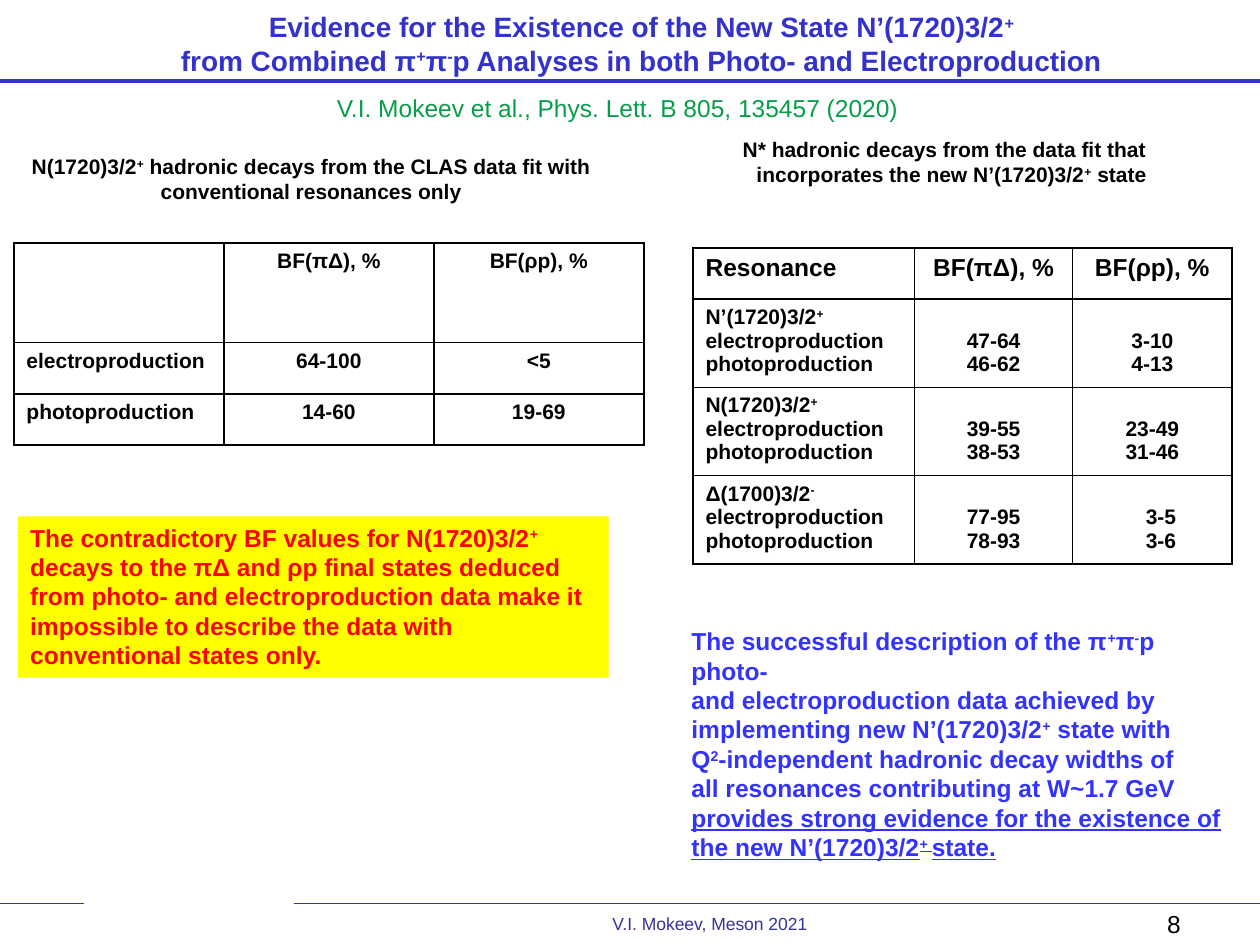
from dataclasses import dataclass
from typing import NamedTuple

from lxml.etree import SubElement
from pptx import Presentation
from pptx.dml.color import RGBColor as Rgb
from pptx.enum.shapes import MSO_CONNECTOR as Connector, MSO_SHAPE as Preset
from pptx.enum.text import MSO_ANCHOR as Anchor, PP_ALIGN as Align
from pptx.oxml.ns import qn
from pptx.util import Cm, Pt


@dataclass(frozen=True)
class Theme:
    """Colours, font and type sizes of the slide."""
    font: str = "Arial"
    black: str = "000000"
    title: str = "3333CC"
    citation: str = "079E49"
    alert: str = "FF0000"
    highlight: str = "FFFF00"
    conclusion: str = "3333FF"
    footer: str = "333399"
    title_size: int = 16
    body_size: int = 14
    table_size: int = 12
    footer_size: int = 10


class Box(NamedTuple):
    """A rectangle in centimetres."""
    left: float
    top: float
    width: float
    height: float

    def inner(self, left, top, width, height):
        """Return a rectangle offset from this one's corner."""
        return Box(self.left + left, self.top + top, width, height)

    def lengths(self):
        """Return the four values as slide lengths."""
        return [Cm(value) for value in self]


THEME = Theme()


def apply(target, formats):
    """Set each format value on the target."""
    for name, value in formats.items():
        setattr(target, name, value)


def write(frame, lines, size, color, align=Align.LEFT, underlined=(), **formats):
    """Fill a frame with one paragraph per line, ^ enclosing superscripts."""
    for index, line in enumerate(lines):
        paragraph = frame.paragraphs[0] if index == 0 else frame.add_paragraph()
        paragraph.alignment = align
        for order, piece in enumerate(line.split("^")):
            if not piece:
                continue
            run = paragraph.add_run()
            run.text = piece
            apply(run.font, {"name": THEME.font, "size": Pt(size), **formats})
            run.font.color.rgb = Rgb.from_string(color)
            if index in underlined:
                run.font.underline = True
            if order % 2:
                run._r.get_or_add_rPr().set("baseline", "30000")


def add_text(slide, box, lines, size, color, frame_formats=None, **formats):
    """Add a wrapped text box."""
    frame = slide.shapes.add_textbox(*box.lengths()).text_frame
    apply(frame, {"word_wrap": True, **(frame_formats or {})})
    write(frame, lines, size, color, **formats)


def add_rule(slide, box, color, weight):
    """Draw a horizontal rule along the top of the box."""
    left, top, width, _ = box.lengths()
    rule = slide.shapes.add_connector(Connector.STRAIGHT, left, top, left + width, top)
    rule.line.color.rgb = Rgb.from_string(color)
    rule.line.width = Pt(weight)
    SubElement(rule._element.spPr, qn("a:effectLst"))


def add_borders(cell):
    """Outline a cell with thin black lines."""
    properties = cell._tc.get_or_add_tcPr()
    for index, side in enumerate(("a:lnL", "a:lnR", "a:lnT", "a:lnB")):
        edge = properties.makeelement(qn(side), {"w": str(Pt(1))})
        properties.insert(index, edge)
        fill = SubElement(edge, qn("a:solidFill"))
        SubElement(fill, qn("a:srgbClr"), val=THEME.black)


def add_grid(slide, box, widths, heights, rows, header_size, cell_formats=None):
    """Add a bordered table and return it; each cell holds a list of lines."""
    grid = slide.shapes.add_table(len(rows), len(widths), *box.lengths()).table
    apply(grid, {"first_row": False, "horz_banding": False})
    for column, width in zip(grid.columns, widths):
        column.width = Cm(width)
    for r, (row, height) in enumerate(zip(rows, heights)):
        grid.rows[r].height = Cm(height)
        for c, lines in enumerate(row):
            cell = grid.cell(r, c)
            cell.fill.background()
            add_borders(cell)
            if r and c:
                apply(cell, cell_formats or {})
            write(cell.text_frame, lines, THEME.table_size if r else header_size,
                  THEME.black, Align.CENTER if c else Align.LEFT, bold=True)
    return grid


def build_header(slide, box):
    """Place the title, its rule and the citation."""
    title = ["Evidence for the Existence of the New State N’(1720)3/2^+^",
             "from Combined π^+^π^-^p Analyses in both Photo- and Electroproduction"]
    add_text(slide, box.inner(0.28, 0.05, 25.3, 1.65), title, THEME.title_size, THEME.title,
             {"vertical_anchor": Anchor.MIDDLE}, align=Align.CENTER, bold=True)
    add_rule(slide, box.inner(0, 1.63, box.width, 0), THEME.title, 2.25)
    add_text(slide, box.inner(6.27, 1.75, 12.37, 0.86),
             ["V.I. Mokeev et al., Phys. Lett. B 805, 135457 (2020)"],
             THEME.body_size, THEME.citation, align=Align.CENTER)


def build_conventional(slide, box):
    """Place the fit with conventional resonances and its contradiction."""
    heading = ["N(1720)3/2^+^ hadronic decays from the CLAS data fit with",
               "conventional resonances only"]
    add_text(slide, box.inner(0, 0, 11.99, 1.27), heading, THEME.table_size, THEME.black,
             {"word_wrap": False}, align=Align.CENTER, bold=True)
    rows = [[[], ["BF(πΔ), %"], ["BF(ρp), %"]],
            [["electroproduction"], ["64-100"], ["<5"]],
            [["photoproduction"], ["14-60"], ["19-69"]]]
    add_grid(slide, box.inner(0, 1.93, box.width, 4.07), [box.width / 3] * 3,
             [2.01, 1.03, 1.03], rows, THEME.table_size)
    callout = slide.shapes.add_shape(Preset.RECTANGLE, *box.inner(0.08, 7.44, 11.91, 3.25).lengths())
    callout.shadow.inherit = False
    callout.fill.solid()
    callout.fill.fore_color.rgb = Rgb.from_string(THEME.highlight)
    callout.line.fill.background()
    apply(callout.text_frame, {"word_wrap": True, "vertical_anchor": Anchor.TOP})
    write(callout.text_frame,
          ["The contradictory BF values for N(1720)3/2^+^ decays to the πΔ and ρp final states "
           "deduced from photo- and electroproduction data make it impossible to describe "
           "the data with conventional states only."],
          THEME.body_size, THEME.alert, bold=True)


def build_new_state(slide, box):
    """Place the fit with the new state and its conclusion."""
    heading = ["N* hadronic decays from the data fit that",
               "incorporates the new N’(1720)3/2^+^ state"]
    add_text(slide, box.inner(0, 0, 13.84, 1.27), heading, THEME.table_size, THEME.black,
             {"margin_right": Cm(3)}, align=Align.RIGHT, bold=True)
    fractions = {"N’(1720)3/2^+^": (["47-64", "46-62"], ["3-10", "4-13"]),
                 "N(1720)3/2^+^": (["39-55", "38-53"], ["23-49", "31-46"]),
                 "Δ(1700)3/2^-^": (["77-95", "78-93"], ["3-5", "3-6"])}
    rows = [[["Resonance"], ["BF(πΔ), %"], ["BF(ρp), %"]]]
    rows += [[[state, "electroproduction", "photoproduction"], *values]
             for state, values in fractions.items()]
    grid = add_grid(slide, box.inner(1.7, 2.38, 10.87, 6.37), [4.47, 3.18, 3.22],
                    [1.03] + [1.78] * 3, rows, THEME.body_size,
                    {"vertical_anchor": Anchor.BOTTOM, "margin_bottom": Cm(0.23)})
    grid.cell(3, 2).margin_left = Cm(0.6)
    conclusion = ["The successful description of the π^+^π^-^p photo-",
                  "and electroproduction data achieved by",
                  "implementing new N’(1720)3/2^+^ state with",
                  "Q^2^-independent hadronic decay widths of",
                  "all resonances contributing at W~1.7 GeV",
                  "provides strong evidence for the existence of",
                  "the new N’(1720)3/2^+ ^state."]
    add_text(slide, box.inner(1.42, 9.88, 11.51, 4.45), conclusion, THEME.body_size,
             THEME.conclusion, {"word_wrap": False}, underlined=(5, 6), bold=True)


def build_footer(slide, box):
    """Place the split rule, the credit and the page number."""
    for left, right in ((0, 1.7), (5.92, box.width)):
        add_rule(slide, box.inner(left, 0, right - left, 0), THEME.footer, 0.75)
    add_text(slide, box.inner(6.45, 0.08, 15.72, 0.69), ["V.I. Mokeev, Meson 2021"],
             THEME.footer_size, THEME.footer, align=Align.CENTER)
    add_text(slide, box.inner(22.99, 0, 1.35, 0.84), ["8"],
             THEME.body_size, THEME.black, align=Align.CENTER)


def main():
    """Build and save the slide."""
    deck = Presentation()
    apply(deck, {"slide_width": Cm(25.4), "slide_height": Cm(19.05)})
    slide = deck.slides.add_slide(deck.slide_layouts[6])
    build_footer(slide, Box(0, 18.21, 25.4, 0.84))
    build_header(slide, Box(0, 0, 25.4, 2.61))
    build_conventional(slide, Box(0.28, 2.97, 12.7, 10.69))
    build_new_state(slide, Box(12.27, 2.62, 13.84, 14.33))
    deck.save("out.pptx")


if __name__ == "__main__":
    main()
